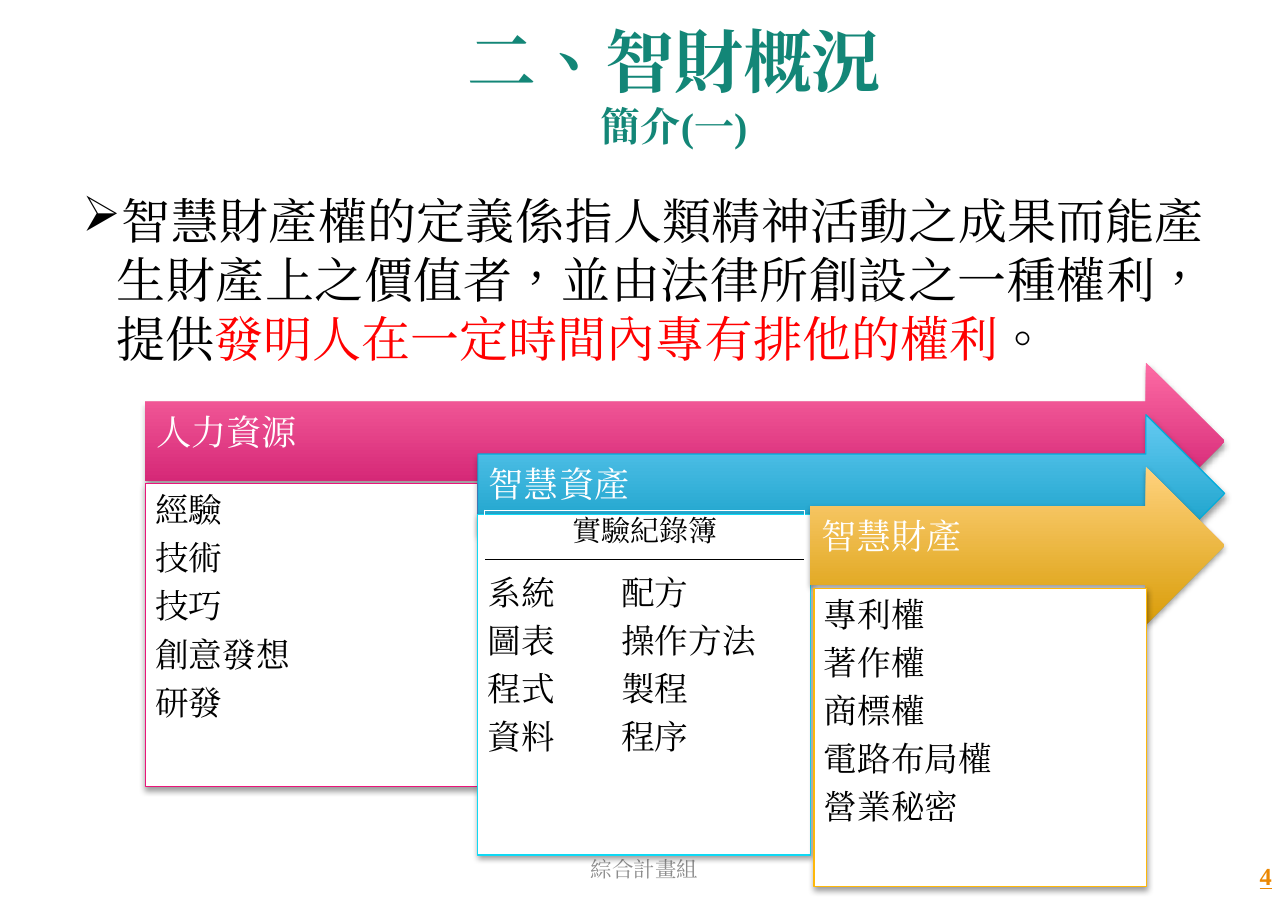
"""Builds the A4 slide on intellectual property with three stepped arrows and lists."""
from lxml.etree import SubElement
from pptx import Presentation
from pptx.dml.color import RGBColor
from pptx.enum.lang import MSO_LANGUAGE_ID
from pptx.enum.shapes import MSO_SHAPE
from pptx.enum.text import MSO_ANCHOR, PP_ALIGN
from pptx.oxml import parse_xml
from pptx.oxml.ns import nsdecls, qn
from pptx.util import Cm, Pt

TITLE = ("二、智財概況", "簡介(一)")
DEFINITION = (
    ("智慧財產權的定義係指人類精神活動之成果而能產生財產上之價值者，並由法律所創設之一種權利，提供", "text"),
    ("發明人在一定時間內專有排他的權利", "accent"),
    ("。", "text"),
)
FOOTER, PAGE_NUMBER = "綜合計畫組", "4"
NOTEBOOK = "實驗紀錄簿"
STEPS = (
    {"name": "人力資源", "gradient": ("FD6BA4", "C81268"), "edge": None, "border": "EA157A",
     "box": (3.35, 11.15, 7.67, 6.99), "inset": 0.23,
     "items": ("經驗", "技術", "技巧", "創意發想", "研發")},
    {"name": "智慧資產", "gradient": ("64CAF2", "0094BC"), "edge": "00ADDC", "border": "0FD9F4",
     "box": (11.02, 11.86, 7.67, 7.85), "inset": 1.42,
     "items": ("系統\t配方", "圖表\t操作方法", "程式\t製程", "資料\t程序")},
    {"name": "智慧財產", "gradient": ("FFD27E", "D99D09"), "edge": None, "border": "FEB80A",
     "box": (18.77, 13.56, 7.67, 6.88), "inset": 0.23,
     "items": ("專利權", "著作權", "商標權", "電路布局權", "營業秘密")},
)
THEME = {
    "font": "Times New Roman",
    "color": {"title": "138677", "text": "000000", "accent": "FF0000", "footer": "8C8C8C",
              "number": "EB8803", "paper": "FFFFFF"},
    "size": {"title": 45, "subtitle": 26.1, "body": 32, "step": 23, "item": 22,
             "table": 19, "number": 16, "footer": 14},
}
ARROW_LEFT, ARROW_TOP, ARROW_RIGHT, ARROW_HEIGHT = 3.35, 8.36, 28.24, 3.63
STEP_ACROSS, STEP_DOWN = 7.67, 1.2
TAB_STOP = 3.08


def theme_color(name):
    return RGBColor.from_string(THEME["color"][name])


def style(para, size, color, align=PP_ALIGN.LEFT, bold=False):
    para.alignment = align
    font = para.font
    font.size, font.bold = Pt(THEME["size"][size]), bold
    font.color.rgb = theme_color(color)
    font.name = THEME["font"]
    font.language_id = MSO_LANGUAGE_ID.TRADITIONAL_CHINESE
    properties = para._p.get_or_add_pPr().find(qn("a:defRPr"))
    SubElement(properties, qn("a:ea"), typeface=THEME["font"])


def set_frame(frame, insets, anchor=MSO_ANCHOR.TOP):
    frame.word_wrap = True
    frame.vertical_anchor = anchor
    frame.margin_left, frame.margin_top, frame.margin_right, frame.margin_bottom = map(Cm, insets)


def add_text(page, place, insets=(0.28, 0.15, 0.28, 0.15), anchor=MSO_ANCHOR.TOP):
    box = page.shapes.add_textbox(*map(Cm, place))
    set_frame(box.text_frame, insets, anchor)
    return box.text_frame.paragraphs[0]


def add_panel(page, kind, place, border):
    panel = page.shapes.add_shape(kind, *map(Cm, place))
    panel.shadow.inherit = False
    effects = panel._element.spPr.find(qn("a:effectLst"))
    effects.append(parse_xml(
        f'<a:outerShdw {nsdecls("a")} blurRad="50800" dist="25400" dir="5400000" rotWithShape="0">'
        '<a:srgbClr val="000000"><a:alpha val="38000"/></a:srgbClr></a:outerShdw>'))
    if border:
        panel.line.color.rgb = RGBColor.from_string(border)
        panel.line.width = Pt(0.75)
    else:
        panel.line.fill.background()
    return panel


def set_spacing(para):
    para.line_spacing = 0.9
    para.space_after = Pt(0.35 * THEME["size"]["item"])


def add_step(page, index, step):
    left = ARROW_LEFT + index * STEP_ACROSS
    place = (left, ARROW_TOP + index * STEP_DOWN, ARROW_RIGHT - left, ARROW_HEIGHT)
    arrow = add_panel(page, MSO_SHAPE.RIGHT_ARROW, place, step["edge"])
    arrow.fill.gradient()
    arrow.fill.gradient_angle = 270
    for stop, color in zip(arrow.fill.gradient_stops, step["gradient"]):
        stop.color.rgb = RGBColor.from_string(color)
    set_frame(arrow.text_frame, (0.25, 0.25, 0.71, 0.58), MSO_ANCHOR.MIDDLE)
    heading = arrow.text_frame.paragraphs[0]
    heading.text = step["name"]
    set_spacing(heading)
    style(heading, "step", "paper")

    box = add_panel(page, MSO_SHAPE.RECTANGLE, step["box"], step["border"])
    box.fill.solid()
    box.fill.fore_color.rgb = theme_color("paper")
    frame = box.text_frame
    set_frame(frame, (0.23, step["inset"], 0.23, 0.23))
    frame.text = "\n".join(step["items"])
    for para in frame.paragraphs:
        if "\t" in para.text:
            tabs = SubElement(para._p.get_or_add_pPr(), qn("a:tabLst"))
            SubElement(tabs, qn("a:tab"), pos=str(Cm(TAB_STOP)), algn="l")
        set_spacing(para)
        style(para, "item", "text")


def add_definition(page):
    para = add_text(page, (1.65, 4.27, 26.39, 6.71), (0.25, 0.13, 0.25, 0.13))
    properties = para._p.get_or_add_pPr()
    properties.set("marL", str(Cm(0.79)))
    properties.set("indent", str(Cm(-0.79)))
    SubElement(properties, qn("a:buChar"), char="➢")
    style(para, "body", "text", PP_ALIGN.JUSTIFY)
    for words, color in DEFINITION:
        span = para.add_run()
        span.text = words
        span.font.color.rgb = theme_color(color)


def add_notebook(page):
    table = page.shapes.add_table(1, 1, Cm(11.18), Cm(11.76), Cm(7.37), Cm(1.14)).table
    table.first_row = table.horz_banding = False
    cell = table.cell(0, 0)
    cell.fill.background()
    cell._tc.get_or_add_tcPr().insert(0, parse_xml(
        f'<a:lnB {nsdecls("a")} w="12700"><a:solidFill>'
        f'<a:srgbClr val="{THEME["color"]["text"]}"/></a:solidFill></a:lnB>'))
    para = cell.text_frame.paragraphs[0]
    para.text = NOTEBOOK
    style(para, "table", "text", PP_ALIGN.CENTER)


def main():
    deck = Presentation()
    deck.slide_width, deck.slide_height = Cm(29.7), Cm(21)
    page = deck.slides.add_slide(deck.slide_layouts[6])

    number = add_text(page, (22.68, 19.71, 6.93, 1.09))
    number.text = PAGE_NUMBER
    style(number, "number", "number", PP_ALIGN.RIGHT, bold=True)
    number.font.underline = True

    title = add_text(page, (1.5, 0.51, 28.09, 2.87), anchor=MSO_ANCHOR.MIDDLE)
    style(title, "title", "title", PP_ALIGN.CENTER, bold=True)
    title.add_run().text = TITLE[0]
    title.add_line_break()
    subtitle = title.add_run()
    subtitle.text = TITLE[1]
    subtitle.font.size = Pt(THEME["size"]["subtitle"])

    footer = add_text(page, (10.16, 19.46, 9.4, 1.12), anchor=MSO_ANCHOR.MIDDLE)
    footer.text = FOOTER
    style(footer, "footer", "footer", PP_ALIGN.CENTER)

    for index, step in enumerate(STEPS):
        add_step(page, index, step)
    add_definition(page)
    add_notebook(page)
    deck.save("out.pptx")


if __name__ == "__main__":
    main()
